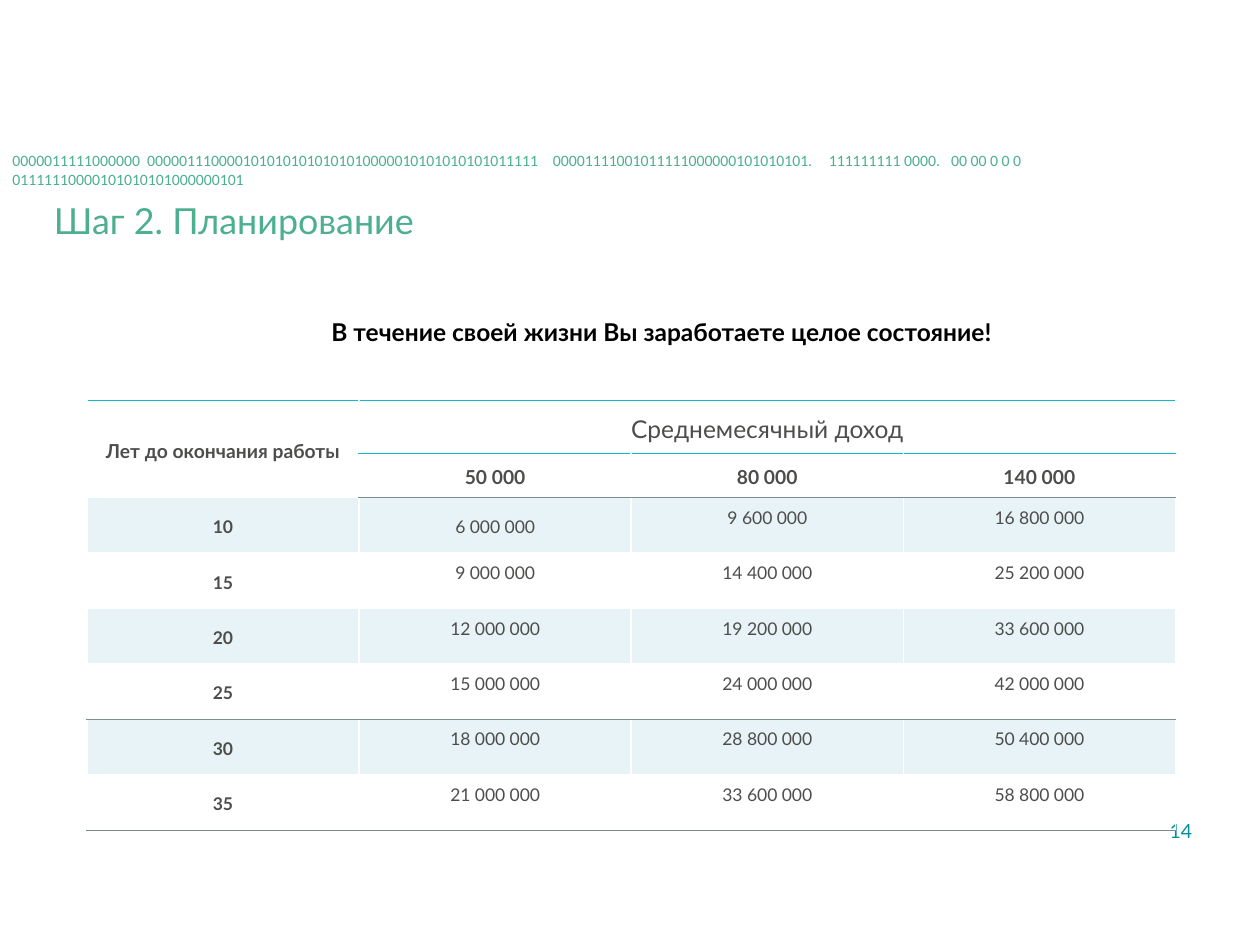
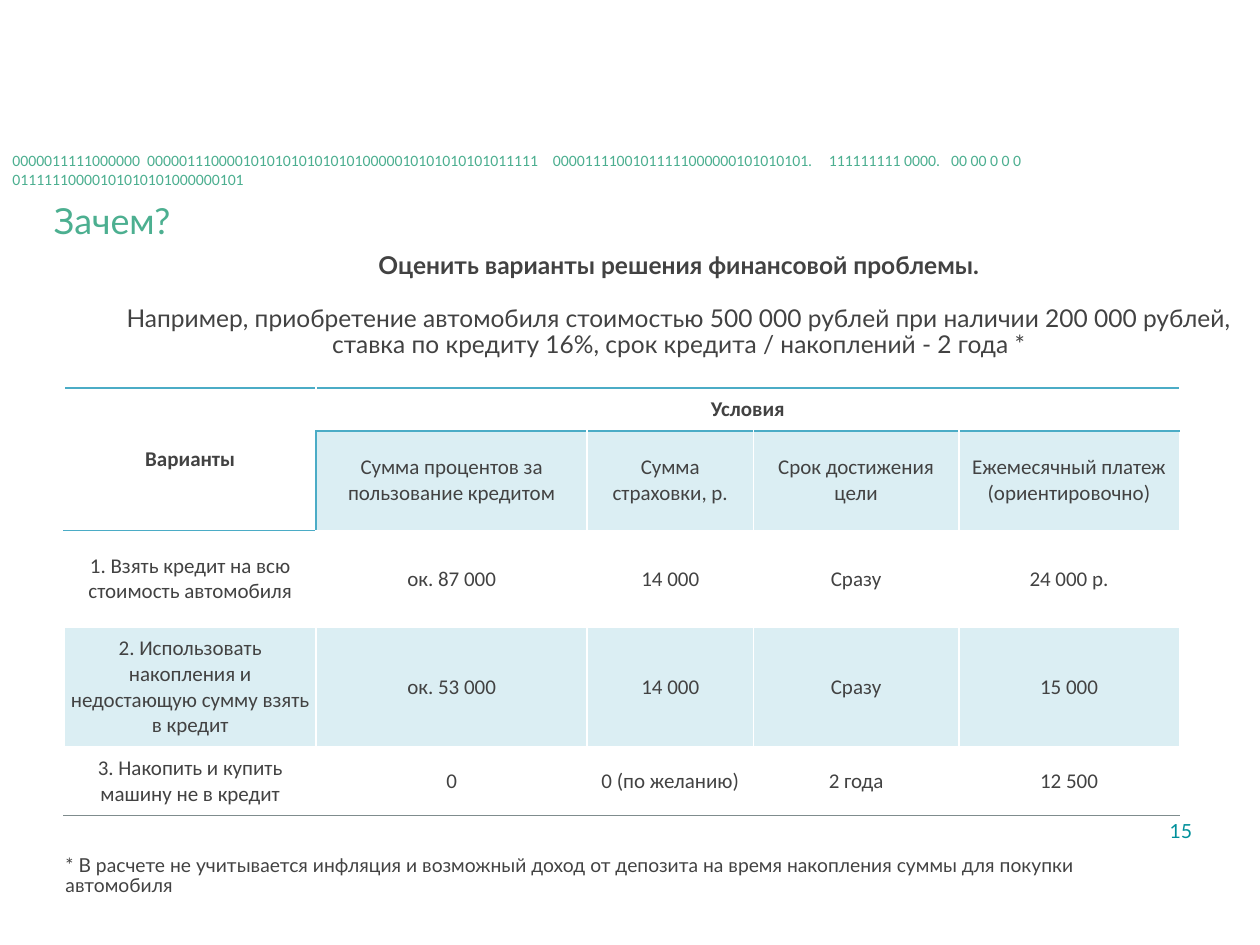
from lxml import etree
from pptx import Presentation
from pptx.dml.color import RGBColor
from pptx.enum import text
from pptx.oxml import ns
from pptx.util import Inches, Pt

COLOURS = {
    "green": "4CAF90",
    "teal": "00909B",
    "black": "000000",
    "ink": "424242",
    "income_ink": "4D4D4C",
    "income_line": "0EBACE",
    "income_band": "E7F3F6",
    "option_line": "4BACC6",
    "rule": "7F8C8D",
}
BINARY_PARTS = [
    "0000011111000000",
    "0000011100001010101010101010000010101010101011111",
    "00001111001011111000000101010101.",
    "111111111 0000.",
    "00 00 0 0 0 01111110000101010101000000101",
]
BINARY_STOPS = [1.07, 4.29, 6.48, 7.45]
EDGES = ["L", "R", "T", "B"]
NARROW = (0.05, 0.05)
WIDE = (0.1, 0.05)
CENTER = text.PP_ALIGN.CENTER
MIDDLE = text.MSO_ANCHOR.MIDDLE
TOP = text.MSO_ANCHOR.TOP


def rgb(name):
    return RGBColor.from_string(COLOURS[name])


def add_span(para, words, size, colour, font="Lato", bold=False):
    span = para.add_run()
    span.text = words
    span.font.name = font
    span.font.size = Pt(size)
    span.font.bold = bold
    span.font.color.rgb = rgb(colour)


def add_box(page, place, insets=NARROW, anchor=TOP):
    box = page.shapes.add_textbox(*map(Inches, place))
    frame = box.text_frame
    frame.word_wrap = True
    frame.vertical_anchor = anchor
    frame.margin_left = frame.margin_right = Inches(insets[0])
    frame.margin_top = frame.margin_bottom = Inches(insets[1])
    return frame


def add_tab_stops(para, stops):
    tabs = etree.SubElement(para._p.get_or_add_pPr(), ns.qn("a:tabLst"))
    for stop in stops:
        etree.SubElement(tabs, ns.qn("a:tab"), pos=str(Inches(stop)), algn="l")


def add_page(deck, title, number):
    page = deck.slides.add_slide(deck.slide_layouts[6])
    number_para = add_box(page, (8.81, 6.4, 0.75, 0.38), WIDE, MIDDLE).paragraphs[0]
    number_para.alignment = text.PP_ALIGN.RIGHT
    add_span(number_para, str(number), 11.1, "teal")
    title_para = add_box(page, (0.33, 1.53, 9.5, 0.5), WIDE).paragraphs[0]
    add_span(title_para, title, 20.5, "green")
    binary_para = add_box(page, (0, 1.15, 10.04, 0.25), WIDE).paragraphs[0]
    add_tab_stops(binary_para, BINARY_STOPS)
    add_span(binary_para, "\t".join(BINARY_PARTS), 9, "green", "Calibri")
    return page


def add_grid(page, left, top, widths, heights):
    place = (left, top, sum(widths), sum(heights))
    table = page.shapes.add_table(len(heights), len(widths), *map(Inches, place)).table
    table.first_row = table.horz_banding = False
    for column, width in zip(table.columns, widths):
        column.width = Inches(width)
    for row, height in zip(table.rows, heights):
        row.height = Inches(height)
    for cell in table.iter_cells():
        cell.fill.background()
        cell.margin_left = cell.margin_right = Inches(0.05)
        cell.margin_top = cell.margin_bottom = Inches(0.05)
    return table


def write_cell(cell, words, size, colour, font="Lato", bold=False, spacing=None, anchor=MIDDLE):
    cell.vertical_anchor = anchor
    para = cell.text_frame.paragraphs[0]
    para.alignment = CENTER
    if spacing:
        para.line_spacing = spacing
    add_span(para, words, size, colour, font, bold)


def shade(cell, colour, opacity=100):
    cell.fill.solid()
    cell.fill.fore_color.rgb = rgb(colour)
    if opacity < 100:
        tint = cell._tc.tcPr.find(".//" + ns.qn("a:srgbClr"))
        etree.SubElement(tint, ns.qn("a:alpha"), val=str(opacity * 1000))


def draw_edge(cell, side, colour, width):
    properties = cell._tc.get_or_add_tcPr()
    earlier = [ns.qn("a:ln" + edge) for edge in EDGES[:EDGES.index(side)]]
    position = sum(child.tag in earlier for child in properties)
    line = etree.Element(ns.qn("a:ln" + side), w=str(Pt(width)))
    fill = etree.SubElement(line, ns.qn("a:solidFill"))
    etree.SubElement(fill, ns.qn("a:srgbClr"), val=COLOURS[colour])
    properties.insert(position, line)


def rule_row(table, row, columns, colour, width=1):
    for column in columns:
        if row > 0:
            draw_edge(table.cell(row - 1, column), "B", colour, width)
        if row < len(table.rows):
            draw_edge(table.cell(row, column), "T", colour, width)


def spaced(number):
    return f"{number:,}".replace(",", " ")


def add_income_table(page):
    incomes = [50000, 80000, 140000]
    years = range(10, 40, 5)
    table = add_grid(page, 0.69, 3.18, [2.16] * 4, [0.42, 0.35] + [0.44] * 6)
    table.cell(0, 0).merge(table.cell(1, 0))
    table.cell(0, 1).merge(table.cell(0, 3))
    style = {"colour": "income_ink", "spacing": 1.15}
    write_cell(table.cell(0, 0), "Лет до окончания работы", 11, bold=True, **style)
    write_cell(table.cell(0, 1), "Среднемесячный доход", 14, **style)
    for column, income in enumerate(incomes, 1):
        write_cell(table.cell(1, column), spaced(income), 11, bold=True, **style)
    for row, span in enumerate(years, 2):
        write_cell(table.cell(row, 0), str(span), 10, bold=True, **style)
        for column, income in enumerate(incomes, 1):
            anchor = MIDDLE if (row, column) == (2, 1) else TOP
            total = spaced(income * 12 * span)
            write_cell(table.cell(row, column), total, 10, anchor=anchor, **style)
        if row % 2 == 0:
            for column in range(4):
                shade(table.cell(row, column), "income_band")
    rule_row(table, 0, range(4), "income_line")
    rule_row(table, 1, range(1, 4), "income_line")
    for row in (2, 6, 8):
        rule_row(table, row, range(4), "rule", 0.75)


def add_options_table(page):
    rows = [
        ["Варианты", "Условия"],
        ["", "Сумма процентов за пользование кредитом", "Сумма страховки, р.",
         "Срок достижения цели", "Ежемесячный платеж (ориентировочно)"],
        ["1. Взять кредит на всю стоимость автомобиля", "ок. 87 000", "14 000", "Сразу", "24 000 р."],
        ["2. Использовать накопления и недостающую сумму взять в кредит",
         "ок. 53 000", "14 000", "Сразу", "15 000"],
        ["3. Накопить и купить машину не в кредит", "0", "0 (по желанию)", "2 года", "12 500"],
    ]
    table = add_grid(page, 0.51, 3.08, [2, 2.15, 1.32, 1.63, 1.75], [0.34, 0.79, 0.77, 0.95, 0.54])
    table.cell(0, 0).merge(table.cell(1, 0))
    table.cell(0, 1).merge(table.cell(0, 4))
    for row, values in enumerate(rows):
        for column, words in enumerate(values):
            cell = table.cell(row, column)
            if words:
                write_cell(cell, words, 12, "ink", "Calibri", row == 0)
                if row % 2:
                    shade(cell, "option_line", 20)
    rule_row(table, 0, range(5), "option_line")
    rule_row(table, 1, range(1, 5), "option_line")
    rule_row(table, 2, [0], "option_line")
    rule_row(table, 5, range(5), "rule", 0.75)
    draw_edge(table.cell(1, 0), "R", "option_line", 1)
    draw_edge(table.cell(1, 1), "L", "option_line", 1)


def add_planning_page(deck):
    page = add_page(deck, "Шаг 2. Планирование", 14)
    para = add_box(page, (2.58, 2.49, 6.13, 0.31)).paragraphs[0]
    para.line_spacing = 0.9
    add_span(para, "В течение своей жизни Вы заработаете целое состояние!", 14, "black", bold=True)
    add_income_table(page)


def add_reason_page(deck):
    page = add_page(deck, "Зачем?", 15)
    note = add_box(page, (0.47, 6.74, 8.46, 0.43)).paragraphs[0]
    note.line_spacing = 0.9
    add_span(note, "* В расчете не учитывается инфляция и возможный доход от депозита "
             "на время накопления суммы для покупки автомобиля", 11, "ink")
    frame = add_box(page, (0.87, 1.96, 9.04, 0.95))
    goal, example = frame.paragraphs[0], frame.add_paragraph()
    for para in (goal, example):
        para.alignment = CENTER
        para.line_spacing = 0.9
    example.space_before = Pt(15)
    add_span(goal, "Оценить варианты решения финансовой проблемы.", 14, "ink", bold=True)
    add_span(example, "Например, приобретение автомобиля стоимостью 500 000 рублей при наличии "
             "200 000 рублей, ставка по кредиту 16%, срок кредита / накоплений - 2 года *", 14, "ink")
    add_options_table(page)


def main():
    deck = Presentation()
    deck.slide_width = Inches(10)
    deck.slide_height = Inches(7.5)
    add_planning_page(deck)
    add_reason_page(deck)
    deck.save("out.pptx")


if __name__ == "__main__":
    main()
